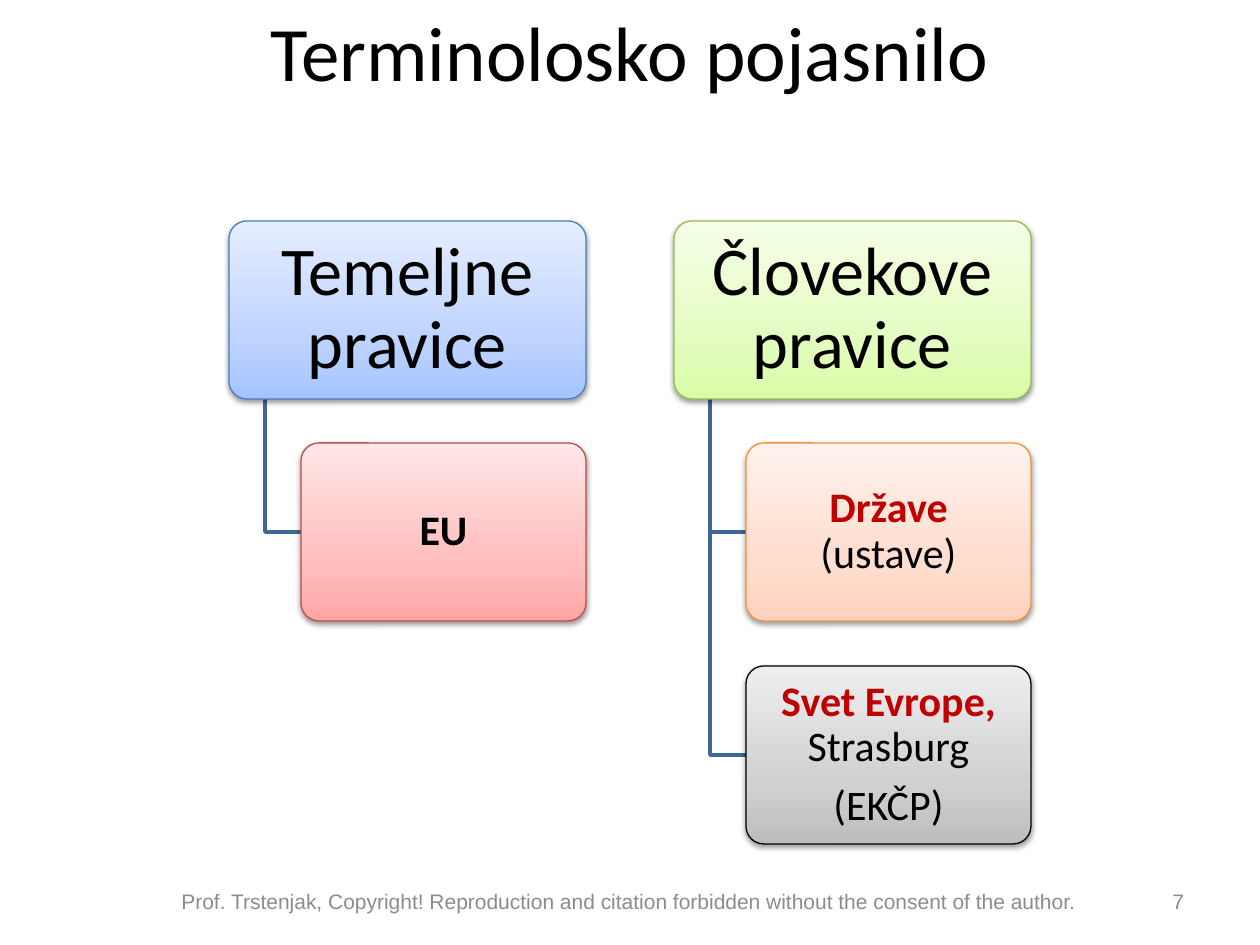
"""Build a slide showing two kinds of rights and the bodies they belong to."""
from copy import deepcopy
from lxml import etree
from pptx import Presentation
from pptx import util as u
from pptx.dml.color import RGBColor
from pptx.enum import shapes, text
from pptx.oxml import ns

PX = 914400 / 126
COL_X, ROW_Y = (229, 674), (221, 443, 666)
BOX_W, BOX_H, INDENT, STEM = 357, 178, 72, 36
RED, BLACK, GREY = "C00000", "000000", "8C8C8C"
MID, LEFT_EDGE = text.PP_ALIGN.CENTER, 0


def color(target, value):
    target.rgb = RGBColor.from_string(value)


def write(s, paragraphs, font, size, align=MID, inset=(13, 6), spacing=1.0):
    tf = s.text_frame
    tf.word_wrap = True
    tf.vertical_anchor = text.MSO_ANCHOR.MIDDLE
    tf.margin_left = tf.margin_right = u.Emu(int(inset[0] * PX))
    tf.margin_top = tf.margin_bottom = u.Emu(int(inset[1] * PX))
    for i, runs in enumerate(paragraphs):
        p = tf.add_paragraph() if i else tf.paragraphs[0]
        p.alignment = align
        p.line_spacing = spacing
        p.space_before = u.Pt(8 if i else 0)
        for words, value, bold in runs:
            r = p.add_run()
            r.text = words
            r.font.name, r.font.size, r.font.bold = font, u.Pt(size), bold
            color(r.font.color, value)


prs = Presentation()
prs.slide_width, prs.slide_height = u.Inches(10), u.Inches(7.5)
slide = prs.slides.add_slide(prs.slide_layouts[6])

footer = "Prof. Trstenjak, Copyright! Reproduction and citation forbidden without the consent of the author."
labels = [
    ((63, 16, 1134, 70), "Terminolosko pojasnilo", "Calibri", 44, BLACK, MID),
    ((54, 876, 1150, 50), footer, "Arial", 12, GREY, MID),
    ((903, 876, 294, 50), "7", "Arial", 12, GREY, text.PP_ALIGN.RIGHT),
]
for place, words, font, size, value, align in labels:
    s = slide.shapes.add_textbox(*(u.Emu(int(n * PX)) for n in place))
    write(s, [[(words, value, False)]], font, size, align)

for col, row in [(0, 1), (1, 1), (1, 2)]:
    x, top, y = COL_X[col] + STEM, ROW_Y[0] + BOX_H, ROW_Y[row] + BOX_H // 2
    builder = slide.shapes.build_freeform(x, top, scale=PX)
    builder.add_line_segments([(x, y), (COL_X[col] + INDENT, y)], close=False)
    s = builder.convert_to_shape()
    s.shadow.inherit = False
    s.fill.background()
    color(s.line.color, "3F6797")
    s.line.width = u.Pt(2)

boxes = [
    (0, 0, ("A4C4FF", "BFD4FF", "E6EEFF"), "4B7EBC", [[("Temeljne pravice", BLACK, False)]]),
    (0, 1, ("FFA6A5", "FFC0BF", "FFE7E7"), "BF4C48", [[("EU", BLACK, True)]]),
    (1, 0, ("DAFDA7", "E4FCC2", "F5FFE7"), "98B955", [[("Človekove pravice", BLACK, False)]]),
    (1, 1, ("FFD2BD", "FFDED0", "FFF2ED"), "F69240",
     [[("Države", RED, True), (" (ustave)", BLACK, False)]]),
    (1, 2, ("BDBDBD", "D1D1D1", "EEEEEE"), BLACK,
     [[("Svet Evrope, ", RED, True), ("Strasburg", BLACK, False)], [("(EKČP)", BLACK, False)]]),
]
for col, row, tints, edge, paragraphs in boxes:
    indent = INDENT if row else 0
    place = (COL_X[col] + indent, ROW_Y[row], BOX_W - indent, BOX_H)
    s = slide.shapes.add_shape(shapes.MSO_SHAPE.ROUNDED_RECTANGLE, *(u.Emu(int(n * PX)) for n in place))
    s.adjustments[0] = 0.1
    s.fill.gradient()
    s.fill.gradient_angle = 90
    sp = s._element.spPr
    stops = sp.find(".//" + ns.qn("a:gsLst"))
    stops.append(deepcopy(stops[0]))
    for stop, position, tint in zip(s.fill.gradient_stops, (0, 0.35, 1), tints):
        stop.position = position
        color(stop.color, tint)
    color(s.line.color, edge)
    s.line.width = u.Pt(0.75)
    s.shadow.inherit = False
    shadow = etree.SubElement(sp.find(ns.qn("a:effectLst")), ns.qn("a:outerShdw"),
                              blurRad=str(u.Pt(3.1)), dist=str(u.Pt(1.6)), dir="5400000", rotWithShape="0")
    shade = etree.SubElement(shadow, ns.qn("a:srgbClr"), val=BLACK)
    etree.SubElement(shade, ns.qn("a:alpha"), val="38000")
    size, inset = (24, (6, 4)) if row else (39, (10, 6))
    write(s, paragraphs, "Calibri", size, inset=inset, spacing=0.9)

prs.save("out.pptx")
